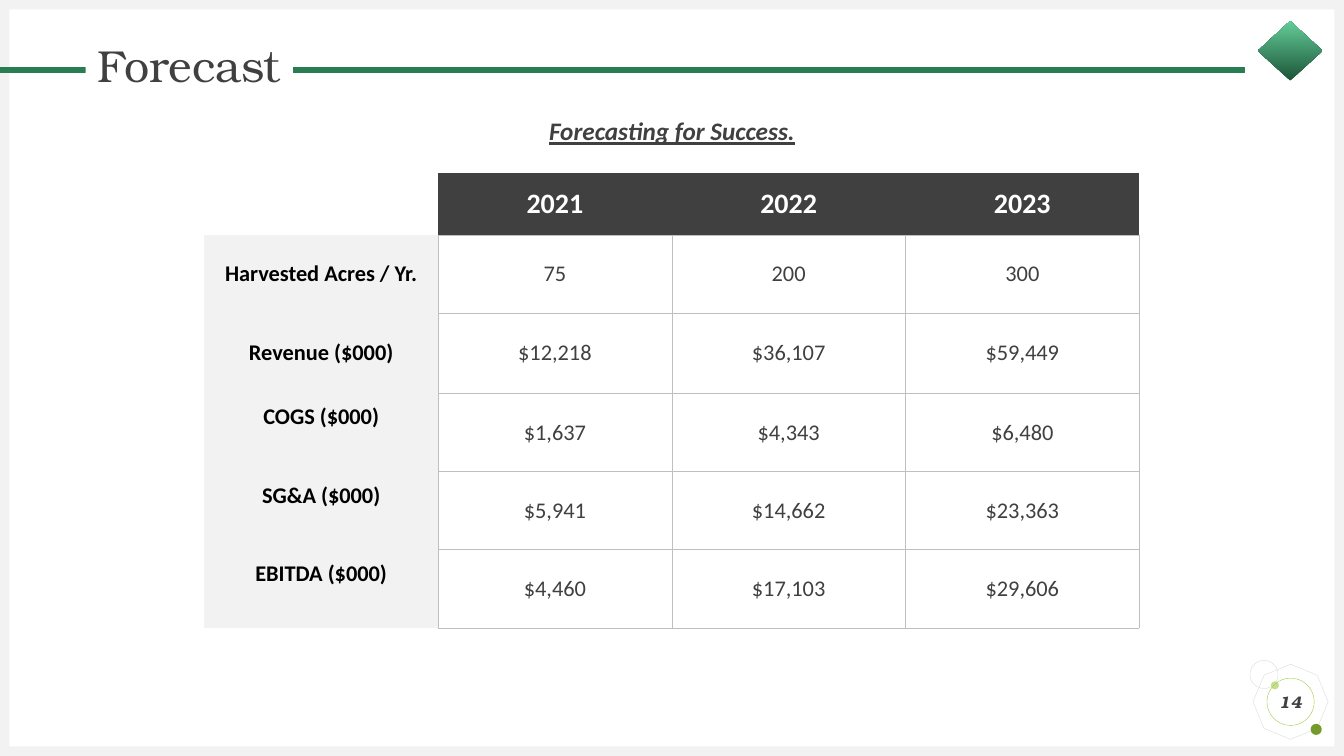
from dataclasses import dataclass
from typing import Optional

from lxml import etree
from pptx import Presentation
from pptx.dml.color import RGBColor
from pptx.enum.shapes import MSO_SHAPE
from pptx.enum.text import MSO_ANCHOR, PP_ALIGN
from pptx.oxml.ns import qn
from pptx.util import Cm, Pt

RECTANGLE, ELLIPSE = MSO_SHAPE.RECTANGLE, MSO_SHAPE.OVAL
OCTAGON, DIAMOND = MSO_SHAPE.OCTAGON, MSO_SHAPE.DIAMOND
MIDDLE, CENTER = MSO_ANCHOR.MIDDLE, PP_ALIGN.CENTER

WHITE = RGBColor(0xFF, 0xFF, 0xFF)
BLACK = RGBColor(0x00, 0x00, 0x00)
CHARCOAL = RGBColor(0x40, 0x40, 0x40)
PALE_GREY = RGBColor(0xF2, 0xF2, 0xF2)
OUTLINE_GREY = RGBColor(0xD9, 0xD9, 0xD9)
GRID_GREY = RGBColor(0xBF, 0xBF, 0xBF)
RULE_GREEN = RGBColor(0x29, 0x7D, 0x53)
DARK_GREEN = RGBColor(0x1B, 0x54, 0x38)
MINT = RGBColor(0x64, 0xCC, 0x98)
LIME = RGBColor(0x9A, 0xCB, 0x39)
LIGHT_LIME = RGBColor(0xC2, 0xE0, 0x88)
OLIVE = RGBColor(0x74, 0x9A, 0x29)

SERIF, SANS = "TeX Gyre Bonum", "Calibri"
SLIDE_WIDTH, SLIDE_HEIGHT, FRAME = 33.87, 19.05, 0.24
HAIRLINE = 0.25

COLUMN_WIDTH = 5.89
ROW_HEIGHTS = (1.57, 1.97, 2.02, 1.97, 1.97, 1.97)
YEARS = ("2021", "2022", "2023")
FORECAST = (
    ("Harvested Acres / Yr.", "75", "200", "300"),
    ("Revenue ($000)", "$12,218", "$36,107", "$59,449"),
    ("COGS ($000)", "$1,637", "$4,343", "$6,480"),
    ("SG&A ($000)", "$5,941", "$14,662", "$23,363"),
    ("EBITDA ($000)", "$4,460", "$17,103", "$29,606"),
)
FIRST_RAISED_ROW = 3


@dataclass(frozen=True)
class Figure:
    """A preset shape, measured in centimetres."""
    kind: int
    left: float
    top: float
    width: float
    height: float
    fill: Optional[RGBColor] = None
    line: Optional[RGBColor] = None
    line_width: float = HAIRLINE
    rotation: float = 0


@dataclass(frozen=True)
class TextStyle:
    font: str
    size: int
    color: RGBColor
    bold: bool = False
    italic: bool = False
    underline: bool = False


@dataclass(frozen=True)
class CellStyle:
    text: TextStyle
    fill: RGBColor
    borders: str


TITLE = TextStyle(SERIF, 32, CHARCOAL)
SUBTITLE = TextStyle(SANS, 18, CHARCOAL, bold=True, italic=True, underline=True)
PAGE_NUMBER = TextStyle(SERIF, 12, CHARCOAL, bold=True, italic=True)

# Border letters: L left, R right, T top, B bottom
CORNER_CELL = CellStyle(TextStyle(SANS, 20, CHARCOAL), WHITE, "")
YEAR_CELL = CellStyle(TextStyle(SANS, 20, WHITE, bold=True), CHARCOAL, "B")
LABEL_CELL = CellStyle(TextStyle(SANS, 16, BLACK, bold=True), PALE_GREY, "R")
VALUE_CELL = CellStyle(TextStyle(SANS, 16, CHARCOAL), WHITE, "LRTB")

DECORATIONS = (
    Figure(OCTAGON, 31.65, 16.81, 1.75, 1.75, line=OUTLINE_GREY, rotation=22.7),
    Figure(ELLIPSE, 32.03, 17.17, 0.2, 0.2, fill=LIGHT_LIME),
    Figure(ELLIPSE, 33.03, 18.24, 0.28, 0.28, fill=OLIVE),
    Figure(ELLIPSE, 31.5, 16.64, 0.71, 0.71, line=OUTLINE_GREY),
    Figure(RECTANGLE, 0, SLIDE_HEIGHT - FRAME, SLIDE_WIDTH, FRAME, PALE_GREY),
    Figure(RECTANGLE, 0, 0, SLIDE_WIDTH, FRAME, PALE_GREY),
    Figure(RECTANGLE, 0, 0, FRAME, SLIDE_HEIGHT, PALE_GREY),
    Figure(RECTANGLE, SLIDE_WIDTH - FRAME, 0, FRAME, SLIDE_HEIGHT, PALE_GREY),
)
EMBLEM = Figure(DIAMOND, 31.7, 0.53, 1.63, 1.5)
PAGE_CIRCLE = Figure(ELLIPSE, 31.93, 17.09, 1.19, 1.19, line=LIME)
TITLE_PLATE = Figure(RECTANGLE, 2.16, 1.02, 5.21, 1.4, fill=WHITE)
TITLE_RULES = (
    Figure(RECTANGLE, 0, 1.7, 2.16, 0.13, RULE_GREEN, RULE_GREEN, 1),
    Figure(RECTANGLE, 7.39, 1.7, 23.98, 0.13, RULE_GREEN, RULE_GREEN, 1),
)


def add_figure(slide, figure: Figure):
    shape = slide.shapes.add_shape(
        figure.kind, Cm(figure.left), Cm(figure.top), Cm(figure.width), Cm(figure.height))
    shape.shadow.inherit = False
    shape.rotation = figure.rotation
    if figure.fill is None:
        shape.fill.background()
    else:
        shape.fill.solid()
        shape.fill.fore_color.rgb = figure.fill
    if figure.line is None:
        shape.line.fill.background()
    else:
        shape.line.color.rgb = figure.line
        shape.line.width = Pt(figure.line_width)
    return shape


def write_centered(frame, text: str, style: TextStyle) -> None:
    paragraph = frame.paragraphs[0]
    paragraph.text = text
    paragraph.alignment = CENTER
    font = paragraph.font
    font.name, font.size, font.color.rgb = style.font, Pt(style.size), style.color
    font.bold, font.italic, font.underline = style.bold, style.italic, style.underline


def write_label(shape, text: str, style: TextStyle, line_spacing: float = 1.0) -> None:
    """Fill a shape's margin-free text frame with one centred line."""
    frame = shape.text_frame
    frame.word_wrap = True
    frame.margin_left = frame.margin_right = frame.margin_top = frame.margin_bottom = 0
    write_centered(frame, text, style)
    frame.paragraphs[0].line_spacing = line_spacing


def add_emblem(slide) -> None:
    fill = add_figure(slide, EMBLEM).fill
    fill.gradient()
    fill.gradient_angle = 90
    for stop, color in zip(fill.gradient_stops, (DARK_GREEN, MINT)):
        stop.color.rgb = color


def set_borders(cell, visible: str) -> None:
    properties = cell._tc.get_or_add_tcPr()
    for index, side in enumerate("LRTB"):
        border = etree.Element(qn(f"a:ln{side}"), w=str(Pt(HAIRLINE)))
        if side in visible:
            fill = etree.SubElement(border, qn("a:solidFill"))
            etree.SubElement(fill, qn("a:srgbClr"), val=str(GRID_GREY))
        else:
            etree.SubElement(border, qn("a:noFill"))
        properties.insert(index, border)


def cell_style(row: int, column: int) -> CellStyle:
    if row == 0:
        return YEAR_CELL if column else CORNER_CELL
    return VALUE_CELL if column else LABEL_CELL


def add_forecast_table(slide) -> None:
    rows = (("", *YEARS), *FORECAST)
    column_count = len(rows[0])
    table = slide.shapes.add_table(
        len(rows), column_count, Cm(5.15), Cm(4.35),
        Cm(COLUMN_WIDTH * column_count), Cm(sum(ROW_HEIGHTS))).table
    table.first_row = table.horz_banding = False
    for column in table.columns:
        column.width = Cm(COLUMN_WIDTH)
    for row, (texts, height) in enumerate(zip(rows, ROW_HEIGHTS)):
        table.rows[row].height = Cm(height)
        for column, text in enumerate(texts):
            cell, style = table.cell(row, column), cell_style(row, column)
            cell.vertical_anchor = MIDDLE
            cell.fill.solid()
            cell.fill.fore_color.rgb = style.fill
            set_borders(cell, style.borders)
            write_centered(cell.text_frame, text, style.text)
            if column == 0 and row >= FIRST_RAISED_ROW:
                cell.margin_bottom = Cm(0.89)


def main() -> None:
    presentation = Presentation()
    presentation.slide_width, presentation.slide_height = Cm(SLIDE_WIDTH), Cm(SLIDE_HEIGHT)
    slide = presentation.slides.add_slide(presentation.slide_layouts[6])
    for figure in DECORATIONS:
        add_figure(slide, figure)
    add_emblem(slide)
    write_label(add_figure(slide, PAGE_CIRCLE), "14", PAGE_NUMBER)
    subtitle = slide.shapes.add_textbox(0, Cm(3), Cm(SLIDE_WIDTH), Cm(0.76))
    write_label(subtitle, "Forecasting for Success.", SUBTITLE, 0.9)
    add_forecast_table(slide)
    for rule in TITLE_RULES:
        add_figure(slide, rule)
    write_label(add_figure(slide, TITLE_PLATE), "Forecast", TITLE, 0.9)
    presentation.save("out.pptx")


if __name__ == "__main__":
    main()
